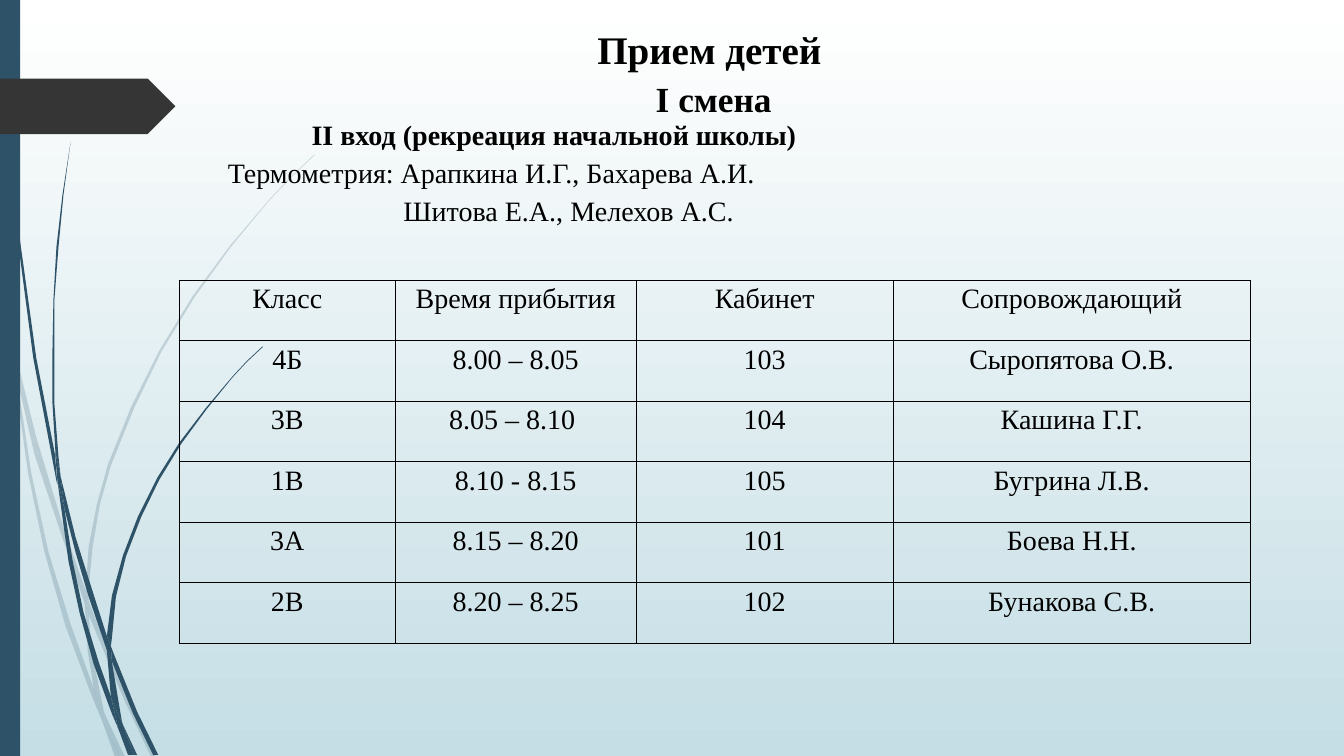
from pptx import Presentation
from pptx.dml.color import RGBColor as RGB
from pptx.enum.shapes import MSO_SHAPE as Kind
from pptx.enum.text import MSO_ANCHOR as Anchor, PP_ALIGN as Align
from pptx.oxml import parse_xml
from pptx.oxml.ns import nsdecls, qn
from pptx.util import Inches, Pt
from lxml import etree

# Grid of 1333 columns by 750 rows
U = Inches(0.01)
COLS, ROWS = 1333, 750
INK = {"text": "000000", "stem": "2E5369", "tag": "353535",
       "top": "FFFFFF", "base": "C5DEE5"}
FONT = "Times New Roman"


def write(para, text, size=20, bold=False, align=Align.CENTER, left=0):
    para.alignment, para.line_spacing = align, 1.12
    para.space_before, para.space_after = Pt(0), Pt(0.1)
    props = para._p.get_or_add_pPr()
    props.set("marL", str(left * U))
    props.set("indent", "0")
    if props.find(qn("a:buNone")) is None:
        etree.SubElement(props, qn("a:buNone"))
    run = para.add_run()
    run.text = text
    font = run.font
    font.name, font.size, font.bold = FONT, Pt(size), bold
    font.color.rgb = RGB.from_string(INK["text"])


def paint(shape, ink, alpha=100):
    shape.shadow.inherit = False
    shape.line.fill.background()
    shape.fill.solid()
    shape.fill.fore_color.rgb = RGB.from_string(INK[ink])
    if alpha < 100:
        tone = shape._element.spPr.find(".//" + qn("a:srgbClr"))
        etree.SubElement(tone, qn("a:alpha")).set("val", str(alpha * 1000))


deck = Presentation()
deck.slide_width, deck.slide_height = COLS * U, ROWS * U
slide = deck.slides.add_slide(deck.slide_layouts[1])
shapes = slide.shapes

# Background
back = slide.background.fill
back.gradient()
back.gradient_angle = 270
for stop, ink, pos in zip(back.gradient_stops, ("top", "base"), (0, 1)):
    stop.color.rgb = RGB.from_string(INK[ink])
    stop.position = pos

# Grass blades, as outlines of grid points: pale ones behind, dark in front
pale = [
    [(11, 350), (9, 322), (0, 282), (0, 299), (10, 344)],
    [(58, 522), (84, 599), (85, 586), (62, 520), (36, 434), (14, 345),
     (17, 376), (34, 450)],
    [(92, 607), (88, 596), (88, 610), (123, 694), (150, 751), (155, 751),
     (127, 692)],
    [(119, 751), (124, 751), (105, 711)],
    [(93, 683), (70, 619), (48, 547), (31, 469), (17, 376), (11, 350),
     (28, 470), (44, 547), (65, 621), (92, 693), (101, 714), (99, 707)],
    [(84, 599), (87, 646), (93, 683), (96, 692), (105, 711), (103, 706),
     (91, 646), (88, 610), (88, 608)],
    [(88, 584), (92, 542), (99, 501), (110, 462), (133, 405), (160, 349),
     (193, 295), (229, 245), (268, 198), (290, 175), (312, 154), (312, 153),
     (289, 175), (268, 197), (228, 244), (191, 294), (158, 348), (130, 404),
     (107, 461), (96, 501), (88, 542), (85, 584), (85, 586), (88, 596)],
    [(101, 714), (114, 751), (119, 751)],
    [(88, 608), (88, 596), (85, 586), (84, 599)],
    [(96, 692), (93, 683), (99, 707), (101, 714), (119, 751), (105, 711)],
]
dark = [
    [(7, 110), (17, 233), (33, 355), (56, 477), (57, 481), (55, 457),
     (55, 453), (36, 355), (19, 232), (8, 109), (5, 48), (4, 0), (3, 0),
     (4, 48)],
    [(88, 592), (106, 645), (106, 631), (93, 590), (75, 533), (60, 472),
     (64, 505), (75, 548)],
    [(113, 649), (110, 641), (111, 656), (132, 708), (152, 749), (157, 749),
     (136, 706)],
    [(110, 691), (98, 657), (83, 608), (72, 556), (64, 505), (57, 477),
     (68, 557), (79, 608), (93, 659), (111, 708), (117, 722), (116, 717)],
    [(60, 472), (58, 453), (54, 401), (54, 349), (54, 297), (58, 245),
     (63, 193), (70, 141), (62, 193), (56, 245), (53, 297), (52, 349),
     (52, 400), (55, 449)],
    [(133, 749), (136, 749), (122, 719)],
    [(57, 477), (64, 505), (60, 472), (55, 449), (55, 453)],
    [(111, 633), (115, 592), (125, 552), (140, 513), (158, 476), (180, 440),
     (205, 406), (231, 374), (245, 359), (261, 344), (260, 344), (245, 358),
     (231, 373), (204, 405), (178, 439), (156, 474), (137, 512), (122, 551),
     (111, 591), (106, 631), (110, 641)],
    [(117, 722), (127, 749), (131, 749)],
    [(106, 645), (110, 691), (116, 706), (122, 719), (121, 716), (111, 656),
     (109, 651)],
    [(106, 645), (109, 651), (111, 656), (110, 641), (106, 631)],
    [(116, 706), (110, 691), (116, 717), (117, 722), (130, 749), (133, 749),
     (122, 719)],
]
for alpha, blades in ((20, pale), (100, dark)):
    for first, *rest in blades:
        pen = shapes.build_freeform(*first, scale=U)
        pen.add_line_segments(rest, close=True)
        paint(pen.convert_to_shape(), "stem", alpha)

# Side bar and arrow tag
bar = shapes.add_shape(Kind.RECTANGLE, 0, 0, 20 * U, ROWS * U)
paint(bar, "stem")
tag = shapes.add_shape(Kind.PENTAGON, 0, 78 * U, 174 * U, 55 * U)
paint(tag, "tag")

# Title and body, in front of the grass
title, body = shapes.title, slide.placeholders[1]
for box, area in ((title, (216, 15, 975, 69)), (body, (216, 108, 667, 199))):
    box.left, box.top, box.width, box.height = (n * U for n in area)
    box.text_frame.word_wrap = True
    box.text_frame.vertical_anchor = Anchor.TOP
    shapes._spTree.append(box._element)

head, text = title.text_frame.paragraphs[0], body.text_frame
write(head, "Прием детей", size=27.9, bold=True)
head.add_line_break()
write(head, " I смена", size=25.2, bold=True)
write(text.paragraphs[0], "II вход (рекреация начальной школы)", bold=True)
write(text.add_paragraph(), "Термометрия: Арапкина И.Г., Бахарева А.И.",
      align=Align.JUSTIFY)
write(text.add_paragraph(), "Шитова Е.А., Мелехов А.С.",
      align=Align.JUSTIFY, left=174)

# Timetable
data = [
    ("Класс", "Время прибытия", "Кабинет", "Сопровождающий"),
    ("4Б", "8.00 – 8.05", "103", "Сыропятова О.В."),
    ("3В", "8.05 – 8.10 ", "104", "Кашина Г.Г."),
    ("1В", "8.10 - 8.15", "105", "Бугрина Л.В."),
    ("3А", "8.15 – 8.20", "101", "Боева Н.Н."),
    ("2В", "8.20 – 8.25", "102", "Бунакова С.В."),
]
wide, high = (214, 239, 255, 354), 60
table = shapes.add_table(len(data), len(wide), 178 * U, 278 * U,
                         sum(wide) * U, high * len(data) * U).table
table.first_row = table.horz_banding = False
for col, w in zip(table.columns, wide):
    col.width = w * U
for row, line in zip(table.rows, data):
    row.height = high * U
    for cell, word in zip(row.cells, line):
        cell.margin_left = cell.margin_right = 7 * U
        cell.margin_top = cell.margin_bottom = 0
        write(cell.text_frame.paragraphs[0], word)
        props = cell._tc.get_or_add_tcPr()
        for side in ("lnL", "lnR", "lnT", "lnB"):
            props.append(parse_xml(
                f'<a:{side} {nsdecls("a")} w="{Pt(1)}"><a:solidFill>'
                f'<a:srgbClr val="{INK["text"]}"/></a:solidFill></a:{side}>'))
        cell.fill.background()

deck.save("out.pptx")
